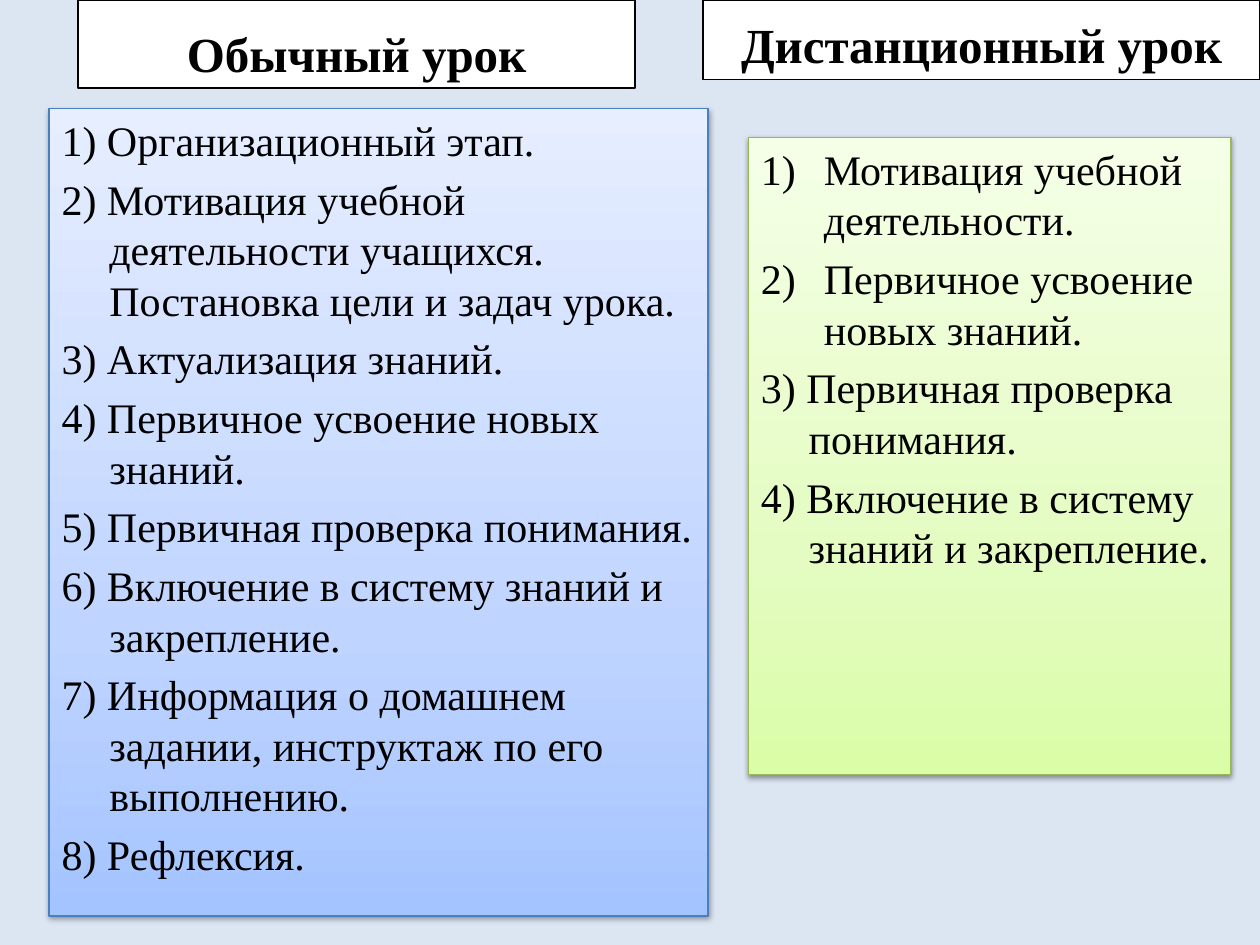
from copy import deepcopy

from lxml import etree
from pptx import Presentation
from pptx.dml.color import RGBColor
from pptx.enum.shapes import MSO_SHAPE
from pptx.enum.text import MSO_ANCHOR, PP_ALIGN
from pptx.oxml.ns import qn
from pptx.util import Inches, Pt

RECTANGLE = MSO_SHAPE.RECTANGLE
TOP, BOTTOM = MSO_ANCHOR.TOP, MSO_ANCHOR.BOTTOM
LEFT, CENTER = PP_ALIGN.LEFT, PP_ALIGN.CENTER

BLACK = RGBColor(0x00, 0x00, 0x00)
WHITE = RGBColor(0xFF, 0xFF, 0xFF)
PALE_BLUE = RGBColor(0xDC, 0xE6, 0xF2)
BLUE_LINE = RGBColor(0x4B, 0x7E, 0xBC)
GREEN_LINE = RGBColor(0x98, 0xB9, 0x55)
BLUES = [RGBColor(0xA4, 0xC4, 0xFF), RGBColor(0xBF, 0xD4, 0xFF), RGBColor(0xE6, 0xEE, 0xFF)]
GREENS = [RGBColor(0xDA, 0xFD, 0xA7), RGBColor(0xE4, 0xFC, 0xC2), RGBColor(0xF5, 0xFF, 0xE7)]
STOP_POSITIONS = [0, 0.35, 1]

FONT = "Times New Roman"
TITLE_SIZE, STEP_SIZE = 28, 24
SPACING_SHARE = 0.2
STEP_INDENT, NUMBERED_INDENT = 0.38, 0.5

REGULAR_STEPS = [
    "1) Организационный этап.",
    "2) Мотивация учебной деятельности учащихся. Постановка цели и задач урока.",
    "3) Актуализация знаний.",
    "4) Первичное усвоение новых знаний.",
    "5) Первичная проверка понимания.",
    "6) Включение в систему знаний и закрепление.",
    "7) Информация о домашнем задании, инструктаж по его выполнению.",
    "8) Рефлексия.",
]
REMOTE_STEPS = [
    "Мотивация учебной деятельности.",
    "Первичное усвоение новых знаний.",
    "3) Первичная проверка понимания.",
    "4) Включение в систему знаний и закрепление.",
]


def add_box(page, place, line_color, anchor):
    """Add an outlined rectangle without a shadow."""
    box = page.shapes.add_shape(RECTANGLE, *map(Inches, place))
    box.shadow.inherit = False
    box.line.color.rgb = line_color
    box.line.width = Pt(0.75)
    box.text_frame.word_wrap = True
    box.text_frame.vertical_anchor = anchor
    return box


def write_lines(box, lines, size, align, bold=False):
    """Write one formatted paragraph per line and return the paragraphs."""
    frame = box.text_frame
    frame.text = "\n".join(lines)
    for para in frame.paragraphs:
        para.alignment = align
        para.space_before = Pt(size * SPACING_SHARE)
        for span in para.runs:
            span.font.name = FONT
            span.font.size = Pt(size)
            span.font.bold = bold
            span.font.color.rgb = BLACK
    return frame.paragraphs


def set_gradient(box, colors):
    """Fill the box with a gradient running from bottom to top."""
    box.fill.gradient()
    box.fill.gradient_angle = 90
    stop_list = next(box._element.spPr.iter(qn("a:gsLst")))
    stop_list.append(deepcopy(stop_list[-1]))
    for stop, position, color in zip(box.fill.gradient_stops, STOP_POSITIONS, colors):
        stop.position = position
        stop.color.rgb = color


def add_shadow(box):
    """Give the box a soft shadow below it."""
    effects = box._element.spPr.find(qn("a:effectLst"))
    shadow = etree.SubElement(
        effects, qn("a:outerShdw"), blurRad=str(Pt(3.1)), dist=str(Pt(1.6)),
        dir="5400000", rotWithShape="0")
    color = etree.SubElement(shadow, qn("a:srgbClr"), val=str(BLACK))
    etree.SubElement(color, qn("a:alpha"), val="38000")


def set_hanging_indent(para, indent, numbered):
    """Hang the paragraph, with automatic numbers if asked."""
    properties = para._p.get_or_add_pPr()
    properties.set("marL", str(Inches(indent)))
    properties.set("indent", str(-Inches(indent)))
    if numbered:
        etree.SubElement(properties, qn("a:buAutoNum"), type="arabicParenR")


def add_title(page, place, text):
    """Add a white lesson title."""
    box = add_box(page, place, BLACK, BOTTOM)
    box.fill.solid()
    box.fill.fore_color.rgb = WHITE
    write_lines(box, [text], TITLE_SIZE, CENTER, bold=True)


def add_steps(page, place, colors, line_color, steps, numbered_count=0):
    """Add a gradient panel listing the lesson steps."""
    box = add_box(page, place, line_color, TOP)
    set_gradient(box, colors)
    add_shadow(box)
    for index, para in enumerate(write_lines(box, steps, STEP_SIZE, LEFT)):
        numbered = index < numbered_count
        set_hanging_indent(para, NUMBERED_INDENT if numbered else STEP_INDENT, numbered)


def main():
    """Build the lesson comparison slide."""
    deck = Presentation()
    deck.slide_width, deck.slide_height = Inches(10), Inches(7.5)
    page = deck.slides.add_slide(deck.slide_layouts[6])
    page.background.fill.solid()
    page.background.fill.fore_color.rgb = PALE_BLUE
    add_title(page, (0.62, 0, 4.42, 0.7), "Обычный урок")
    add_steps(page, (0.39, 0.86, 5.23, 6.41), BLUES, BLUE_LINE, REGULAR_STEPS)
    add_title(page, (5.58, 0, 4.42, 0.63), "Дистанционный урок")
    add_steps(page, (5.94, 1.09, 3.83, 5.06), GREENS, GREEN_LINE, REMOTE_STEPS, numbered_count=2)
    deck.save("out.pptx")


if __name__ == "__main__":
    main()
